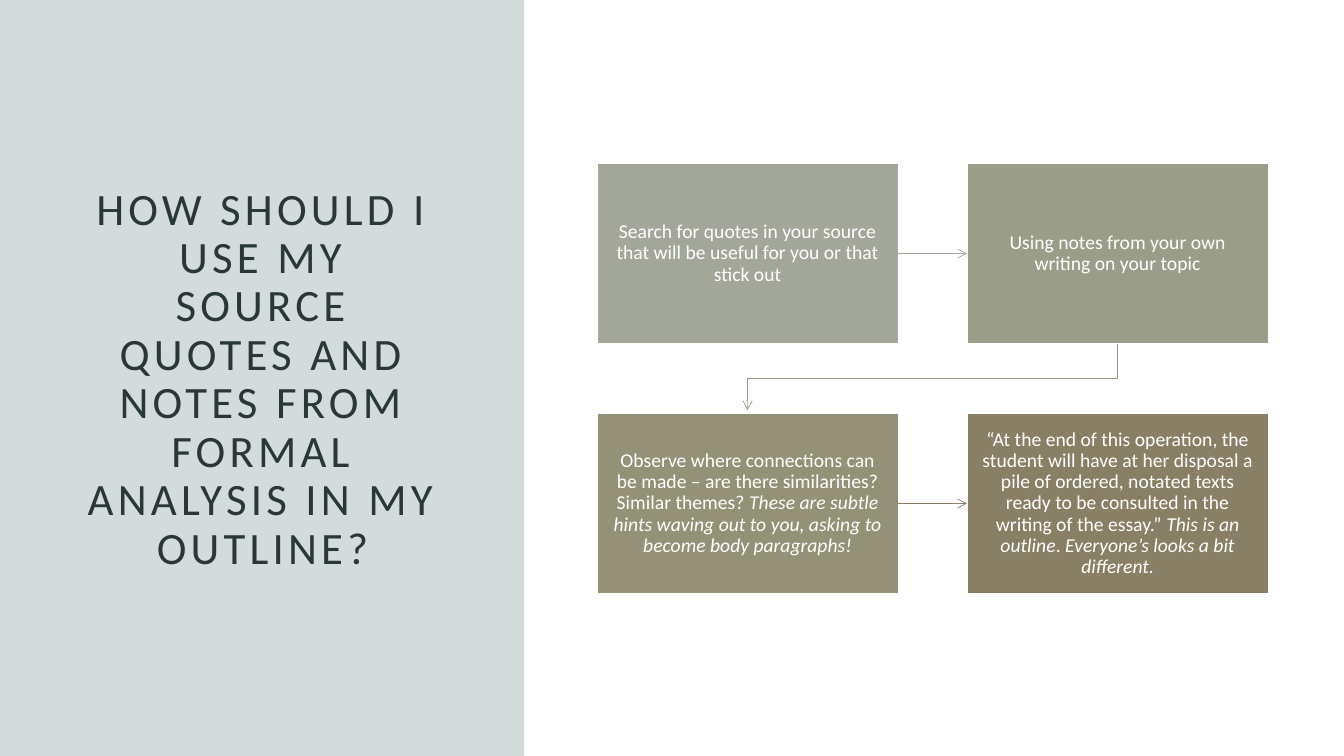
from dataclasses import dataclass

from lxml import etree
from pptx import Presentation
from pptx.dml.color import RGBColor
from pptx.enum.shapes import MSO_CONNECTOR, MSO_SHAPE
from pptx.enum.text import MSO_ANCHOR, MSO_AUTO_SIZE, PP_ALIGN
from pptx.oxml.ns import qn
from pptx.util import Inches, Pt

RECTANGLE = MSO_SHAPE.RECTANGLE
STRAIGHT = MSO_CONNECTOR.STRAIGHT
MIDDLE = MSO_ANCHOR.MIDDLE
NO_AUTOFIT = MSO_AUTO_SIZE.NONE
CENTER = PP_ALIGN.CENTER
BOTTOM_SIDE, TOP_SIDE = 2, 0
LEFT_SIDE, RIGHT_SIDE = 1, 3


@dataclass(frozen=True)
class Theme:
    """Colours, font and type sizes of the slide."""

    font: str = "Calibri"
    title_size: int = 32
    step_size: int = 14
    title: str = "293737"
    panel: str = "557272"
    white: str = "FFFFFF"
    steps: tuple = ("A2A79A", "9A9D88", "949276", "897F65")
    turn: str = "97987F"


@dataclass(frozen=True)
class Grid:
    """Columns and rows that hold the steps, in inches."""

    left: float = 5.92
    top: float = 1.62
    width: float = 2.99
    height: float = 1.79
    column_step: float = 3.67
    row_step: float = 2.48
    columns: int = 2

    def place(self, index):
        """Return the left, top, width and height of one step."""
        row, column = divmod(index, self.columns)
        lengths = (self.left + column * self.column_step,
                   self.top + row * self.row_step, self.width, self.height)
        return [Inches(length) for length in lengths]


THEME = Theme()
GRID = Grid()
SLIDE_WIDTH, SLIDE_HEIGHT = Inches(13.33), Inches(7.5)
PANEL_SHARE = 0.39
ARROW_GAP = Inches(0.03)
TITLE = ("HOW SHOULD I USE MY SOURCE QUOTES AND NOTES FROM FORMAL "
         "ANALYSIS IN MY OUTLINE?")
STEPS = [
    [("Search for quotes in your source that will be useful for you or that stick out", False)],
    [("Using notes from your own writing on your topic", False)],
    [("Observe where connections can be made – are there similarities? Similar themes? ", False),
     ("These are subtle hints waving out to you, asking to become body paragraphs!", True)],
    [("“At the end of this operation, the student will have at her disposal a pile of "
      "ordered, notated texts ready to be consulted in the writing of the essay.” ", False),
     ("This is an outline", True), (". ", False),
     ("Everyone’s looks a bit different.", True)],
]


def format_span(span, size, color):
    """Set the font, size and colour of a run."""
    span.font.name = THEME.font
    span.font.size = Pt(size)
    span.font.color.rgb = RGBColor.from_string(color)


def format_para(para):
    """Centre a paragraph with tight lines."""
    para.alignment = CENTER
    para.line_spacing = 0.9


def add_rectangle(page, place, color):
    """Add a plain filled rectangle without a line."""
    box = page.shapes.add_shape(RECTANGLE, *place)
    box.shadow.inherit = False
    box.fill.solid()
    box.fill.fore_color.rgb = RGBColor.from_string(color)
    box.line.fill.background()
    return box


def add_panel(page):
    """Add the translucent panel behind the title."""
    place = (0, 0, round(SLIDE_WIDTH * PANEL_SHARE), SLIDE_HEIGHT)
    panel = add_rectangle(page, place, THEME.panel)
    color = panel.fill._xPr.find(qn("a:solidFill"))[0]
    etree.SubElement(color, qn("a:alpha"), val="25000")


def set_title(page):
    """Place the title on the panel and format it."""
    title = page.shapes.title
    title.left, title.top = Inches(0.75), Inches(0.77)
    title.width, title.height = Inches(3.71), Inches(6)
    frame = title.text_frame
    frame.text = TITLE
    frame.word_wrap = True
    frame.auto_size = NO_AUTOFIT
    frame.vertical_anchor = MIDDLE
    para = frame.paragraphs[0]
    format_para(para)
    span = para.runs[0]
    format_span(span, THEME.title_size, THEME.title)
    span.font._element.set("spc", "300")
    page.shapes._spTree.append(title._element)


def add_step(page, index, parts):
    """Add one step box with upright and italic text."""
    box = add_rectangle(page, GRID.place(index), THEME.steps[index])
    box.line.color.rgb = RGBColor.from_string(THEME.white)
    box.line.width = Pt(1)
    frame = box.text_frame
    frame.word_wrap = True
    frame.vertical_anchor = MIDDLE
    frame.margin_left = frame.margin_right = Inches(0.15)
    frame.margin_top = frame.margin_bottom = Inches(0.15)
    para = frame.paragraphs[0]
    format_para(para)
    for words, italic in parts:
        span = para.add_run()
        span.text = words
        format_span(span, THEME.step_size, THEME.white)
        span.font.italic = italic
    return box


def style_arrow(arrow, color):
    """Give a line its colour, width and open arrowhead."""
    arrow.line.color.rgb = RGBColor.from_string(color)
    arrow.line.width = Pt(0.5)
    etree.SubElement(arrow.line._get_or_add_ln(), qn("a:tailEnd"), type="arrow")


def add_straight_arrow(page, source, target, color):
    """Join two boxes of one row."""
    arrow = page.shapes.add_connector(STRAIGHT, 0, 0, 0, 0)
    arrow.begin_connect(source, RIGHT_SIDE)
    arrow.end_connect(target, LEFT_SIDE)
    style_arrow(arrow, color)
    etree.SubElement(arrow._element.spPr, qn("a:effectLst"))


def add_turn_arrow(page, source, target, color):
    """Lead from the end of one row to the start of the next."""
    start_x = source.left + source.width // 2
    end_x = target.left + target.width // 2
    start_y = source.top + source.height
    turn_y = (start_y + target.top) // 2
    builder = page.shapes.build_freeform(start_x, start_y)
    builder.add_line_segments(
        [(start_x, turn_y), (end_x, turn_y), (end_x, target.top - ARROW_GAP)],
        close=False)
    arrow = builder.convert_to_shape()
    arrow.shadow.inherit = False
    arrow.fill.background()
    style_arrow(arrow, color)


def main():
    """Build the slide and save it."""
    deck = Presentation()
    deck.slide_width, deck.slide_height = SLIDE_WIDTH, SLIDE_HEIGHT
    page = deck.slides.add_slide(deck.slide_layouts.get_by_name("Title Only"))
    add_panel(page)
    set_title(page)
    search, notes, observe, outline = [
        add_step(page, index, parts) for index, parts in enumerate(STEPS)]
    add_straight_arrow(page, search, notes, THEME.steps[0])
    add_turn_arrow(page, notes, observe, THEME.turn)
    add_straight_arrow(page, observe, outline, THEME.steps[3])
    deck.save("out.pptx")


if __name__ == "__main__":
    main()
